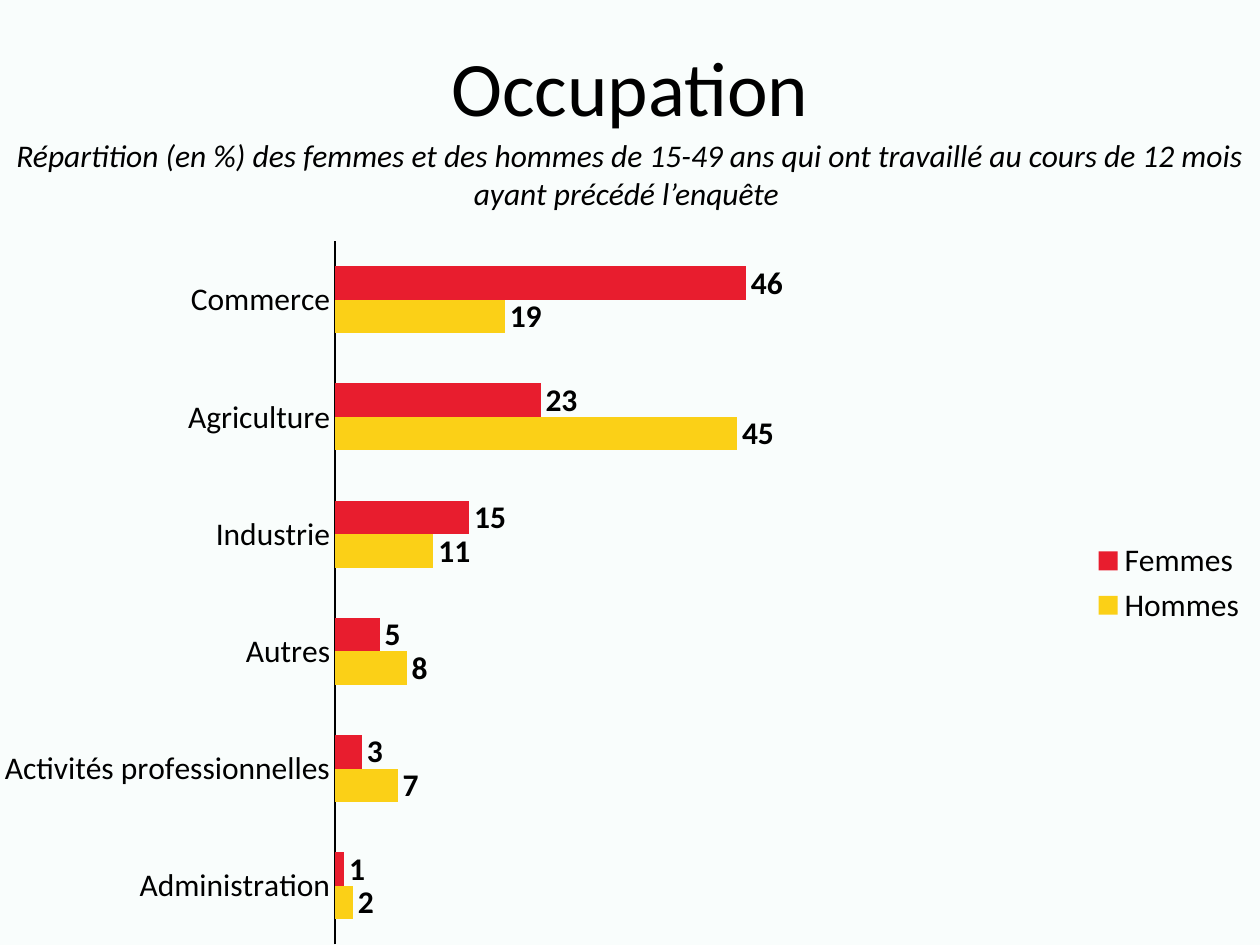
"""Build the slide on occupations of women and men as a clustered bar chart."""
from dataclasses import dataclass

from pptx import Presentation
from pptx.chart.data import CategoryChartData
from pptx.dml.color import RGBColor
from pptx.enum.chart import XL_CHART_TYPE, XL_LABEL_POSITION, XL_LEGEND_POSITION, XL_TICK_MARK
from pptx.enum.text import MSO_ANCHOR, PP_ALIGN
from pptx.oxml import parse_xml
from pptx.oxml.ns import nsdecls
from pptx.util import Pt

BAR = XL_CHART_TYPE.BAR_CLUSTERED
OUTSIDE = XL_LABEL_POSITION.OUTSIDE_END
RIGHT = XL_LEGEND_POSITION.RIGHT
NO_TICK = XL_TICK_MARK.NONE
MIDDLE = MSO_ANCHOR.MIDDLE
CENTER = PP_ALIGN.CENTER

FONT = "Calibri"
COLORS = {"bg": "F9FDFC", "text": "000000", "women": "E81D2E", "men": "FBD017"}
SLIDE_W, SLIDE_H = 720, 540
PLOT = {"x": 0.266, "y": 0.027, "w": 0.709, "h": 0.973}
CATEGORIES = ("Administration", "Activités professionnelles", "Autres",
              "Industrie", "Agriculture", "Commerce")


@dataclass(frozen=True)
class Group:
    name: str
    values: tuple[int, ...]
    color: str


@dataclass(frozen=True)
class Box:
    left: float
    top: float
    width: float
    height: float

    def lengths(self) -> tuple:
        return Pt(self.left), Pt(self.top), Pt(self.width), Pt(self.height)


GROUPS = (
    Group("Hommes", (2, 7, 8, 11, 45, 19), "men"),
    Group("Femmes", (1, 3, 5, 15, 23, 46), "women"),
)
TITLE_BOX = Box(0, 0, SLIDE_W, 104.4)
SUBTITLE_BOX = Box(0, 74.2, SLIDE_W, 51)
CHART_BOX = Box(0, 126.7, SLIDE_W, SLIDE_H - 126.7)


def rgb(name: str) -> RGBColor:
    return RGBColor.from_string(COLORS[name])


def style_font(font, size: float = 18, bold: bool = False, italic: bool = False) -> None:
    font.name = FONT
    font.size = Pt(size)
    font.bold = bold
    font.italic = italic
    font.color.rgb = rgb("text")


def write_text(shape, text: str, *, size: float = 18, italic: bool = False,
               anchor=None, spacing: float | None = None) -> None:
    tf = shape.text_frame
    tf.word_wrap = True
    tf.vertical_anchor = anchor
    p = tf.paragraphs[0]
    p.alignment = CENTER
    p.line_spacing = spacing
    r = p.add_run()
    r.text = text
    style_font(r.font, size, italic=italic)


def set_plot_layout(chart) -> None:
    plot_area = chart.element.xpath(".//c:plotArea")[0]
    for old in plot_area.xpath("./c:layout"):
        plot_area.remove(old)
    modes = '<c:xMode val="edge"/><c:yMode val="edge"/>'
    sizes = "".join(f'<c:{key} val="{value}"/>' for key, value in PLOT.items())
    plot_area.insert(0, parse_xml(
        f'<c:layout {nsdecls("c")}><c:manualLayout><c:layoutTarget val="inner"/>'
        f"{modes}{sizes}</c:manualLayout></c:layout>"))


def style_series(series, group: Group) -> None:
    series.format.fill.solid()
    series.format.fill.fore_color.rgb = rgb(group.color)
    series.invert_if_negative = False
    labels = series.data_labels
    labels.show_value = True
    labels.position = OUTSIDE
    labels.number_format = "0"
    labels.number_format_is_linked = False
    style_font(labels.font, bold=True)


def add_bar_chart(s, groups: tuple[Group, ...], box: Box) -> None:
    data = CategoryChartData(number_format="0")
    data.categories = CATEGORIES
    for group in groups:
        data.add_series(group.name, group.values)
    chart = s.shapes.add_chart(BAR, *box.lengths(), data).chart
    style_font(chart.font, 10)
    chart.has_title = False
    chart.has_legend = True
    chart.legend.position = RIGHT
    chart.legend.include_in_layout = False
    style_font(chart.legend.font)

    plot = chart.plots[0]
    plot.gap_width = 150
    plot.vary_by_categories = False
    for series, group in zip(plot.series, groups):
        style_series(series, group)

    cat_axis = chart.category_axis
    cat_axis.major_tick_mark = NO_TICK
    cat_axis.minor_tick_mark = NO_TICK
    cat_axis.format.line.color.rgb = rgb("text")
    cat_axis.format.line.width = Pt(0.75)
    style_font(cat_axis.tick_labels.font)
    val_axis = chart.value_axis
    val_axis.minimum_scale = 0
    val_axis.maximum_scale = 100
    val_axis.has_major_gridlines = False
    val_axis.visible = False
    set_plot_layout(chart)


def main() -> None:
    prs = Presentation()
    prs.slide_width, prs.slide_height = Pt(SLIDE_W), Pt(SLIDE_H)
    s = prs.slides.add_slide(prs.slide_layouts[5])
    s.background.fill.solid()
    s.background.fill.fore_color.rgb = rgb("bg")

    title = s.shapes.title
    title.left, title.top, title.width, title.height = TITLE_BOX.lengths()
    write_text(title, "Occupation", size=44, anchor=MIDDLE, spacing=0.9)
    add_bar_chart(s, GROUPS, CHART_BOX)
    subtitle = s.shapes.add_textbox(*SUBTITLE_BOX.lengths())
    write_text(subtitle, "Répartition (en %) des femmes et des hommes de 15-49 ans qui ont "
               "travaillé au cours de 12 mois ayant précédé l’enquête ", italic=True)
    prs.save("out.pptx")


if __name__ == "__main__":
    main()
